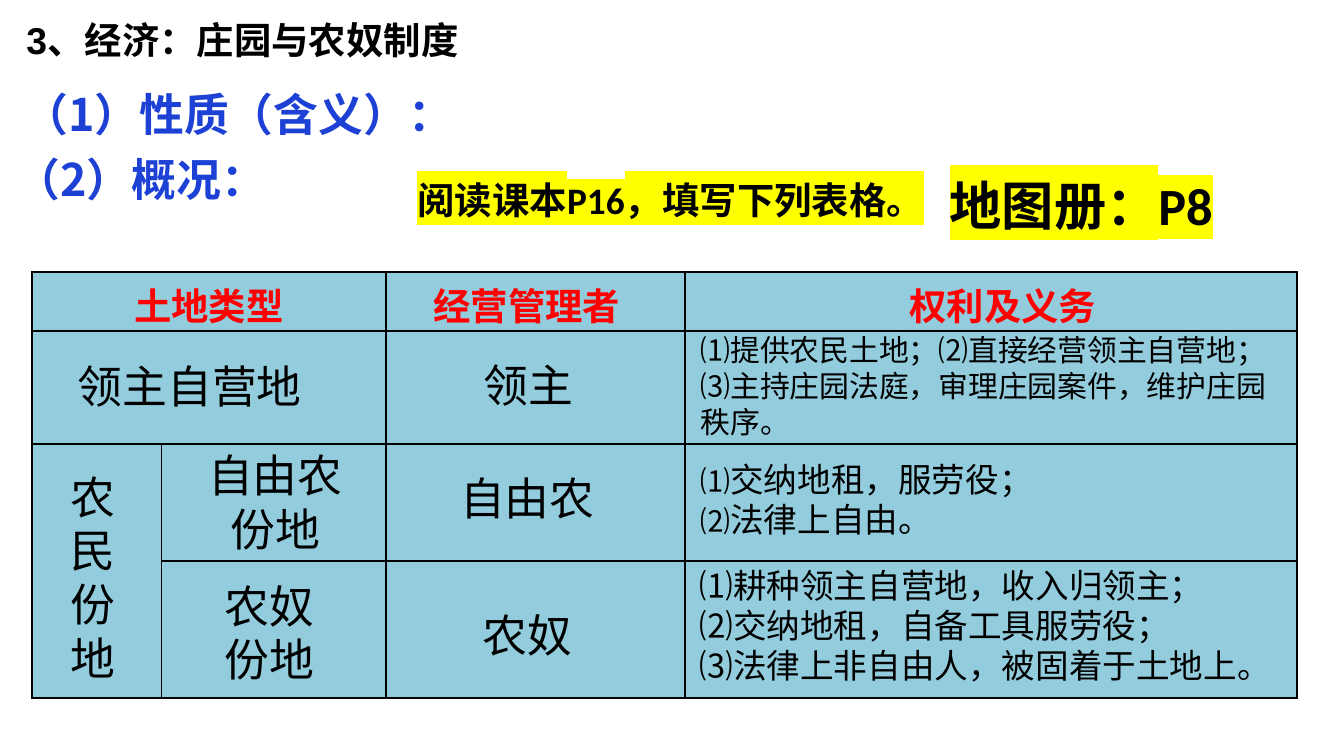
"""Build a slide on the medieval manor economy."""
from dataclasses import dataclass
from typing import Any, NamedTuple

from lxml.etree import SubElement as Sub
from pptx import Presentation
from pptx.dml.color import RGBColor as Rgb
from pptx.enum.text import MSO_ANCHOR as Anchor, MSO_AUTO_SIZE as Auto, PP_ALIGN as Align
from pptx.oxml import parse_xml
from pptx.oxml.ns import nsdecls, qn
from pptx.util import Cm, Pt


@dataclass(frozen=True)
class Theme:
    """Colours, fonts and type sizes."""
    black: str = "000000"
    red: str = "FF0000"
    blue: str = "1D41D5"
    teal: str = "93CDDD"
    mark: str = "FFFF00"
    hans: str = "Noto Sans CJK SC"
    latin: str = "Calibri"
    head: str = "Arial"
    mini: int = 16
    small: int = 18
    mid: int = 20
    large: int = 24
    huge: int = 28


T = Theme()


class Style(NamedTuple):
    """Look of a run."""
    size: int
    font: str = T.hans
    color: str = T.black
    bold: bool = False
    mark: str = ""


class Run(NamedTuple):
    """Words with one look."""
    text: str
    style: Style


class Area(NamedTuple):
    """Place and size in centimetres."""
    left: float
    top: float
    width: float
    height: float


@dataclass(frozen=True)
class Label:
    """Text block with its place and layout."""
    area: Area
    paras: tuple[tuple[Run, ...], ...]
    align: Align = Align.LEFT
    anchor: Anchor = Anchor.TOP
    pad: tuple[float, float] = (0.25, 0.13)
    lead: float = 1.0


class Head(NamedTuple):
    """Header cell of the table."""
    col: int
    text: str
    align: Align
    inset: float


MINI, SMALL, LARGE = Style(T.mini), Style(T.small), Style(T.large)
RED = Style(T.mid, color=T.red, bold=True)
BLUE = Style(T.large, color=T.blue, bold=True)
TITLE = Style(T.mid, T.head, bold=True)
TASK = Style(T.mid, T.latin, bold=True, mark=T.mark)
ATLAS = TASK._replace(size=T.huge)
TIGHT = (0.18, 0.1)
MID, CENTER = Anchor.MIDDLE, Align.CENTER


def lines(style: Style, *texts: str) -> tuple[tuple[Run, ...], ...]:
    """Make one paragraph per text in a single style."""
    return tuple((Run(text, style),) for text in texts)


HOLDERS = (
    Label(Area(0.32, 0.2, 8.59, 1.22), lines(TITLE, "3、经济：庄园与农奴制度"),
          anchor=MID, pad=TIGHT, lead=0.9),
    Label(Area(0.26, 1.54, 24.2, 1.22), lines(BLUE, "（1）性质（含义）："), pad=TIGHT),
    Label(Area(0.11, 2.76, 4.34, 1.22), lines(BLUE, "（2）概况："), pad=TIGHT),
)
LABELS = (
    Label(Area(1.22, 6.65, 5.08, 1.3), lines(LARGE, "领主自营地")),
    Label(Area(1.09, 8.74, 1.68, 4.37), lines(LARGE, "农民份地")),
    Label(Area(3.3, 8.33, 3.81, 2.31), lines(LARGE, "自由农份地"), CENTER),
    Label(Area(3.89, 10.8, 2.41, 2.31), lines(LARGE, "农奴份地"), CENTER),
    Label(Area(7.87, 6.63, 4.24, 1.28), lines(LARGE, "领主"), CENTER),
    Label(Area(7.82, 8.76, 4.29, 1.28), lines(LARGE, "自由农"), CENTER),
    Label(Area(7.82, 11.35, 4.29, 1.28), lines(LARGE, "农奴"), CENTER),
    Label(Area(12.99, 6.14, 11.3, 2.31), lines(
        MINI, "⑴提供农民土地；⑵直接经营领主自营地；⑶主持庄园法庭，审理庄园案件，维护庄园秩序。")),
    Label(Area(12.99, 8.54, 10.13, 1.8), (
        (Run("⑴", MINI), Run("交纳地租，服劳役；", SMALL)),
        (Run("⑵", MINI), Run("法律上自由。", SMALL)))),
    Label(Area(12.97, 10.54, 11.53, 2.57), lines(
        SMALL, "⑴耕种领主自营地，收入归领主；", "⑵交纳地租，自备工具服劳役；",
        "⑶法律上非自由人，被固着于土地上。")),
    Label(Area(7.71, 3.15, 10.82, 1.24), lines(TASK, "阅读课本P16，填写下列表格。"),
          anchor=MID, pad=TIGHT),
    Label(Area(17.7, 3.14, 6.91, 1.45), lines(ATLAS, "地图册：P8")),
)
HEADS = (
    Head(0, "土地类型", CENTER, 0.25),
    Head(2, "经营管理者", Align.LEFT, 0.9),
    Head(3, "权利及义务", CENTER, 0.7),
)
GRID = Area(0.61, 5.14, 23.9, 8.05)
COLS = (2.44, 4.24, 5.66, 11.56)
ROWS = (1.12, 2.13, 2.21, 2.59)
SPANS = ((0, 0, 0, 1), (1, 0, 1, 1), (2, 0, 3, 0))


def add_run(para: Any, item: Run) -> None:
    """Append a styled run to a paragraph."""
    run, style = para.add_run(), item.style
    run.text = item.text
    font = run.font
    font.size, font.bold = Pt(style.size), style.bold
    font.color.rgb = Rgb.from_string(style.color)
    props = run._r.get_or_add_rPr()
    if style.mark:
        Sub(Sub(props, qn("a:highlight")), qn("a:srgbClr"), val=style.mark)
    font.name = style.font
    if style.font == T.hans:
        Sub(props, qn("a:ea"), typeface=style.font)


def fill_text(shape: Any, label: Label) -> None:
    """Place a shape and write its paragraphs."""
    shape.left, shape.top, shape.width, shape.height = map(Cm, label.area)
    frame = shape.text_frame
    frame.word_wrap, frame.auto_size = True, Auto.NONE
    frame.vertical_anchor = label.anchor
    frame.margin_left = frame.margin_right = Cm(label.pad[0])
    frame.margin_top = frame.margin_bottom = Cm(label.pad[1])
    for i, runs in enumerate(label.paras):
        para = frame.add_paragraph() if i else frame.paragraphs[0]
        para.alignment, para.line_spacing = label.align, label.lead
        para.space_before = Pt(0)
        props = para._p.get_or_add_pPr()
        props.set("marL", "0")
        props.set("indent", "0")
        Sub(props, qn("a:buNone"))
        for item in runs:
            add_run(para, item)


def paint(cell: Any) -> None:
    """Give a cell its fill and thin borders."""
    cell.fill.solid()
    cell.fill.fore_color.rgb = Rgb.from_string(T.teal)
    props = cell._tc.get_or_add_tcPr()
    for i, side in enumerate("LRTB"):
        props.insert(i, parse_xml(
            f'<a:ln{side} {nsdecls("a")} w="{Pt(1)}"><a:solidFill>'
            f'<a:srgbClr val="{T.black}"/></a:solidFill></a:ln{side}>'))


def add_grid(slide: Any) -> None:
    """Draw the table with merged cells and headers."""
    table = slide.shapes.add_table(len(ROWS), len(COLS), *map(Cm, GRID)).table
    for col, width in zip(table.columns, COLS):
        col.width = Cm(width)
    for row, height in zip(table.rows, ROWS):
        row.height = Cm(height)
    for cell in table.iter_cells():
        paint(cell)
    for top, left, low, right in SPANS:
        table.cell(top, left).merge(table.cell(low, right))
    for head in HEADS:
        cell = table.cell(0, head.col)
        cell.margin_left = Cm(head.inset)
        cell.margin_top, cell.margin_bottom = Cm(0.09), Cm(0)
        para = cell.text_frame.paragraphs[0]
        para.alignment = head.align
        add_run(para, Run(head.text, RED))


def main() -> None:
    """Build and save the slide."""
    deck = Presentation()
    deck.slide_width, deck.slide_height = Cm(25.4), Cm(14.29)
    slide = deck.slides.add_slide(deck.slide_layouts[3])
    for i, label in enumerate(HOLDERS):
        fill_text(slide.placeholders[i], label)
    add_grid(slide)
    for label in LABELS:
        fill_text(slide.shapes.add_textbox(*map(Cm, label.area)), label)
    deck.save("out.pptx")


if __name__ == "__main__":
    main()
